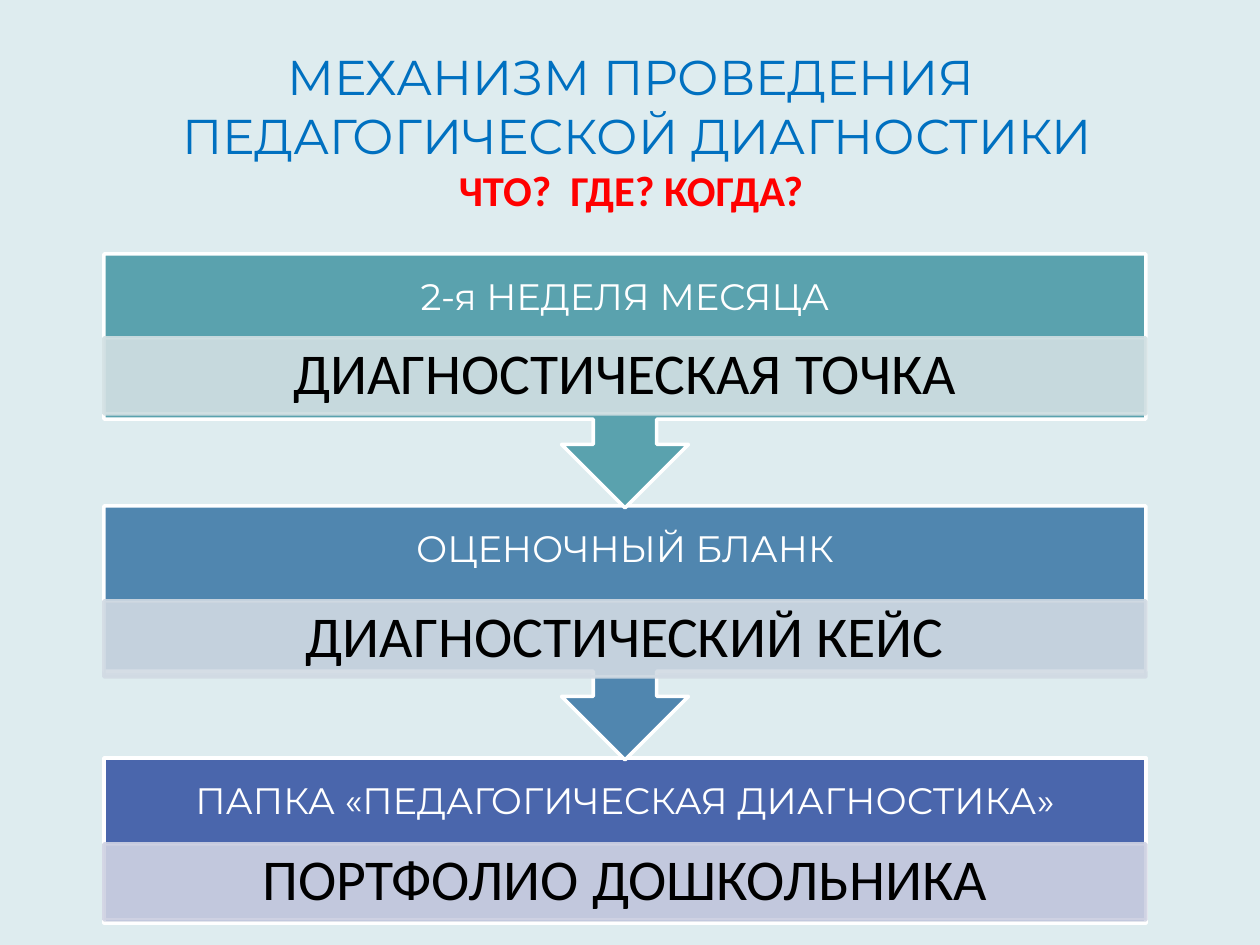
"""Build the slide on how pedagogical diagnostics are carried out."""
from dataclasses import dataclass

from pptx import Presentation
from pptx import util as u
from pptx.dml.color import RGBColor
from pptx.enum import shapes, text
from pptx.oxml.ns import qn

PX = 914400 // 126
LEFT, WIDTH = 104, 1042
TOP, PITCH = 254, 252
BOX_H, CALLOUT_H, LABEL_H, BAND_H = 165, 254, 90, 76


@dataclass(frozen=True)
class Theme:
    """Colours, fonts and type sizes."""
    background: str = "DEECEF"
    title: str = "0070C0"
    accent: str = "FF0000"
    light: str = "FFFFFF"
    dark: str = "000000"
    display: str = "Montserrat"
    body: str = "Calibri"
    title_size: float = 27.9
    question_size: float = 24.3
    label_size: float = 21
    band_size: float = 33
    line_width: float = 2
    band_opacity: int = 90


@dataclass(frozen=True)
class Step:
    """One stage: a label above a pale band."""
    label: str
    result: str
    fill: str
    band_fill: str
    band_top: int


THEME = Theme()
STEPS = [
    Step("2-я НЕДЕЛЯ МЕСЯЦА", "ДИАГНОСТИЧЕСКАЯ ТОЧКА", "5AA2AE", "D2E0E3", 338),
    Step("ОЦЕНОЧНЫЙ БЛАНК", "ДИАГНОСТИЧЕСКИЙ КЕЙС", "5086AF", "D1DAE3", 601),
    Step("ПАПКА «ПЕДАГОГИЧЕСКАЯ ДИАГНОСТИКА»", "ПОРТФОЛИО ДОШКОЛЬНИКА",
         "4A66AC", "D0D3E3", 844),
]


def box(*lengths: int) -> list[int]:
    """Turn px lengths into EMU."""
    return [n * PX for n in lengths]


def assign(obj, values: dict) -> None:
    """Set attributes from a dict."""
    for name, value in values.items():
        setattr(obj, name, value)


def add_run(p, words: str, font: str, size: float, color: str, bold: bool = False) -> None:
    """Add a formatted run to a paragraph."""
    r = p.add_run()
    r.text = words
    assign(r.font, {"name": font, "size": u.Pt(size), "bold": bold})
    r.font.color.rgb = RGBColor.from_string(color)


def centre(tf, side: int, top: int, bottom: int):
    """Centre a text frame with px insets and return its paragraph."""
    assign(tf, {"word_wrap": True, "auto_size": text.MSO_AUTO_SIZE.NONE,
                "vertical_anchor": text.MSO_ANCHOR.MIDDLE,
                "margin_left": side * PX, "margin_right": side * PX,
                "margin_top": top * PX, "margin_bottom": bottom * PX})
    p = tf.paragraphs[0]
    p.alignment = text.PP_ALIGN.CENTER
    return p


def add_block(s, kind, top: int, height: int, fill: str, line: str, opacity: int = 100):
    """Add a full-width filled and outlined shape."""
    sp = s.shapes.add_shape(kind, *box(LEFT, top, WIDTH, height))
    sp.shadow.inherit = False
    sp.fill.solid()
    sp.line.width = u.Pt(THEME.line_width)
    sp.fill.fore_color.rgb = RGBColor.from_string(fill)
    sp.line.color.rgb = RGBColor.from_string(line)
    if opacity < 100:
        for color in sp.fill._xPr.iter(qn("a:srgbClr")):
            color.makeelement(qn("a:alpha"), {})
            alpha = color.makeelement(qn("a:alpha"), {"val": str(opacity * 1000)})
            color.append(alpha)
    return sp


def add_step(s, step: Step, top: int, last: bool) -> None:
    """Draw one stage, with an arrow to the next unless it is the last."""
    kind = shapes.MSO_SHAPE.RECTANGLE if last else shapes.MSO_SHAPE.UP_ARROW_CALLOUT
    sp = add_block(s, kind, top, BOX_H if last else CALLOUT_H, step.fill, THEME.light)
    sp.rotation = 0 if last else 180
    label = s.shapes.add_textbox(*box(LEFT, top, WIDTH, LABEL_H))
    p = centre(label.text_frame, 20, 20, 20)
    p.line_spacing = 0.9
    add_run(p, step.label, THEME.display, THEME.label_size, THEME.light)
    band = add_block(s, shapes.MSO_SHAPE.RECTANGLE, step.band_top, BAND_H,
                     step.band_fill, step.band_fill, THEME.band_opacity)
    p = centre(band.text_frame, 33, 6, 6)
    p.line_spacing = 0.9
    add_run(p, step.result, THEME.body, THEME.band_size, THEME.dark)


def add_title(s) -> None:
    """Place and fill the title placeholder."""
    title = s.shapes.title
    assign(title, dict(zip(("left", "top", "width", "height"), box(64, 26, 1134, 158))))
    p = centre(title.text_frame, 12, 58, 6)
    for words in ("МЕХАНИЗМ ПРОВЕДЕНИЯ", " ПЕДАГОГИЧЕСКОЙ ДИАГНОСТИКИ"):
        add_run(p, words, THEME.display, THEME.title_size, THEME.title)
        p.add_line_break()
    add_run(p, "ЧТО?  ГДЕ? КОГДА?", THEME.body, THEME.question_size, THEME.accent, True)


def main() -> None:
    """Build and save the presentation."""
    prs = Presentation()
    assign(prs, {"slide_width": u.Inches(10), "slide_height": u.Inches(7.5)})
    s = prs.slides.add_slide(prs.slide_layouts[5])
    s.background.fill.solid()
    s.background.fill.fore_color.rgb = RGBColor.from_string(THEME.background)
    add_title(s)
    for i, step in reversed(list(enumerate(STEPS))):
        add_step(s, step, TOP + i * PITCH, i == len(STEPS) - 1)
    prs.save("out.pptx")


if __name__ == "__main__":
    main()
